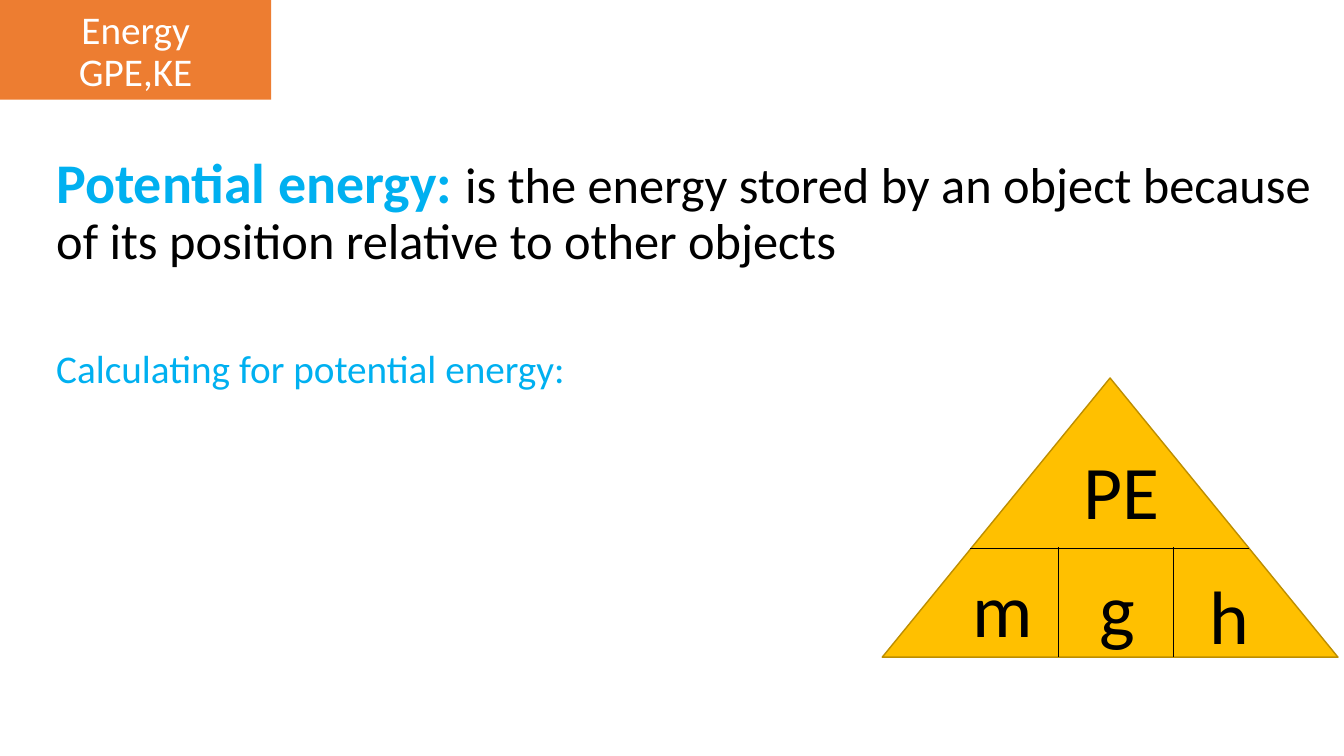
from lxml.etree import SubElement
from pptx import Presentation
from pptx.dml.color import RGBColor
from pptx.enum.shapes import MSO_CONNECTOR, MSO_SHAPE
from pptx.enum.text import MSO_ANCHOR, PP_ALIGN
from pptx.oxml.ns import qn
from pptx.util import Emu, Pt

FONT = "Calibri"
BLACK, WHITE, BLUE = "000000", "FFFFFF", "00B0F0"
ORANGE, GOLD, DARK_GOLD = "ED7D31", "FFC000", "BD8E00"


def px(n):
    """Convert px, 100 to the inch, to EMU."""
    return Emu(n * 9144)


def rgb(color):
    return RGBColor.from_string(color)


class SlideBuilder:
    def __init__(self, slide):
        self.shapes = slide.shapes

    def style(self, font, size, color, bold=False):
        font.name, font.size, font.bold = FONT, Pt(size), bold
        font.color.rgb = rgb(color)

    def shape(self, kind, x, y, w, h, fill, line=None):
        sp = self.shapes.add_shape(kind, px(x), px(y), px(w), px(h))
        sp.shadow.inherit = False
        sp.fill.solid()
        sp.fill.fore_color.rgb = rgb(fill)
        if line:
            sp.line.color.rgb = rgb(line)
            sp.line.width = Pt(1)
        else:
            sp.line.fill.background()
        return sp

    def line(self, x1, y1, x2, y2):
        cn = self.shapes.add_connector(
            MSO_CONNECTOR.STRAIGHT, px(x1), px(y1), px(x2), px(y2))
        cn.line.color.rgb = rgb(BLACK)
        cn.line.width = Pt(0.5)
        SubElement(cn._element.spPr, qn("a:effectLst"))

    def text_box(self, x, y, w, h):
        tf = self.shapes.add_textbox(px(x), px(y), px(w), px(h)).text_frame
        tf.word_wrap = True
        return tf

    def symbol(self, text, x, y, align):
        p = self.text_box(x, y, 98, 90).paragraphs[0]
        p.text, p.alignment = text, align
        self.style(p.font, 54, BLACK)

    def paragraph(self, p, runs, before):
        """Fill p with runs of (text, size, colour, bold)."""
        p.line_spacing, p.space_before = 0.9, Pt(before)
        for text, *look in runs:
            r = p.add_run()
            r.text = text
            self.style(r.font, *look)


def main():
    prs = Presentation()
    prs.slide_width, prs.slide_height = px(1333), px(750)
    s = SlideBuilder(prs.slides.add_slide(prs.slide_layouts[6]))

    tf = s.text_box(46, 149, 1266, 568)
    s.paragraph(tf.paragraphs[0], [
        ("Potential energy: ", 40, BLUE, True),
        ("is the energy stored by an object because of its position "
         "relative to other objects", 36, BLACK),
    ], before=10)
    s.paragraph(tf.add_paragraph(),
                [("Calculating for potential energy:", 28, BLUE)], before=57)

    s.shape(MSO_SHAPE.ISOSCELES_TRIANGLE, 875, 375, 452, 277, GOLD, DARK_GOLD)
    s.line(962, 544, 1239, 544)
    for x in (1050, 1164):
        s.line(x, 543, x, 652)
    for text, x, y, align in (
        ("PE", 1065, 436, PP_ALIGN.LEFT),
        ("m", 945, 553, PP_ALIGN.CENTER),
        ("g", 1059, 553, PP_ALIGN.CENTER),
        ("h", 1190, 559, PP_ALIGN.LEFT),
    ):
        s.symbol(text, x, y, align)

    tf = s.shape(MSO_SHAPE.RECTANGLE, 0, -2, 269, 101, ORANGE).text_frame
    tf.vertical_anchor = MSO_ANCHOR.BOTTOM
    p = tf.paragraphs[0]
    p.text = "Energy\vGPE,KE"
    p.alignment, p.line_spacing = PP_ALIGN.CENTER, 0.9
    s.style(p.font, 28, WHITE)

    prs.save("out.pptx")


if __name__ == "__main__":
    main()
